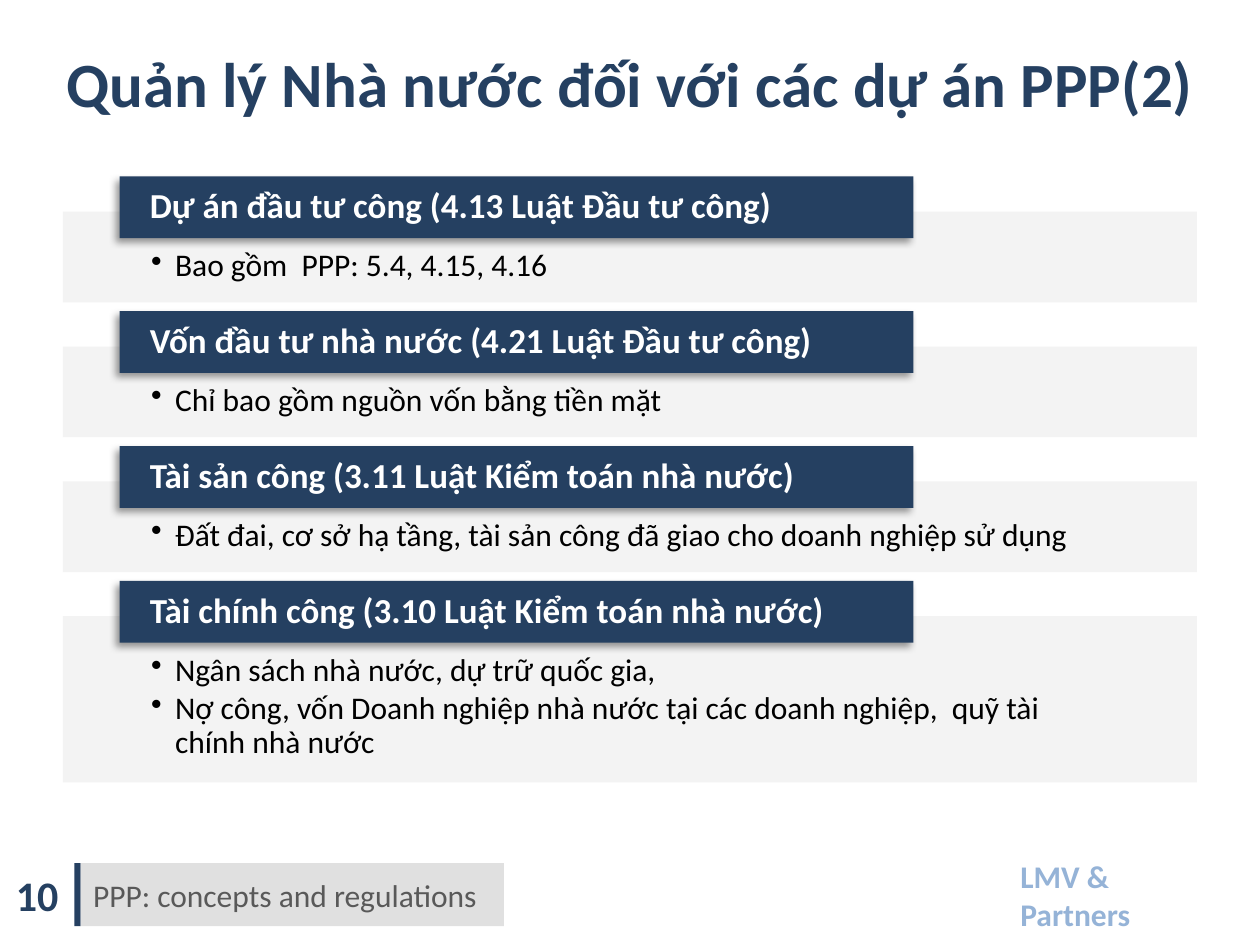
"""Build a slide on state management of PPP projects."""
from dataclasses import dataclass

from lxml import etree
from pptx import Presentation
from pptx import util as u
from pptx.dml.color import RGBColor
from pptx.enum import shapes, text
from pptx.oxml import ns

NAVY = RGBColor(0x25, 0x40, 0x61)
PALE = RGBColor(0xF2, 0xF2, 0xF2)
SILVER = RGBColor(0xD9, 0xD9, 0xD9)
GREY = RGBColor(0x59, 0x59, 0x59)
SKY = RGBColor(0x95, 0xB3, 0xD7)
BLACK = RGBColor(0, 0, 0)
WHITE = RGBColor(0xFF, 0xFF, 0xFF)

WIDTH, HEIGHT = u.Inches(10), u.Inches(7.5)
COLUMN, ROW = WIDTH / 100, HEIGHT / 75
FIRST_HEADING, PITCH, OVERHANG = 14, 10.7, 2.8
FOOTER_TOP, FOOTER_HEIGHT = 68.5, 5


@dataclass(frozen=True)
class Box:
    """Area in grid columns and rows."""
    column: float
    row: float
    columns: float
    rows: float

    def emu(self) -> tuple:
        """Return left, top, width and height."""
        return (u.Emu(round(self.column * COLUMN)), u.Emu(round(self.row * ROW)),
                u.Emu(round(self.columns * COLUMN)), u.Emu(round(self.rows * ROW)))


@dataclass(frozen=True)
class Topic:
    """Heading with its points and the height of its panel."""
    heading: str
    points: tuple[str, ...]
    rows: float = 7.2


TOPICS = (
    Topic("Dự án đầu tư công (4.13 Luật Đầu tư công)", ("Bao gồm  PPP: 5.4, 4.15, 4.16",)),
    Topic("Vốn đầu tư nhà nước (4.21 Luật Đầu tư công)",
          ("Chỉ bao gồm nguồn vốn bằng tiền mặt",)),
    Topic("Tài sản công (3.11 Luật Kiểm toán nhà nước)",
          ("Đất đai, cơ sở hạ tầng, tài sản công đã giao cho doanh nghiệp sử dụng",)),
    Topic("Tài chính công (3.10 Luật Kiểm toán nhà nước)",
          ("Ngân sách nhà nước, dự trữ quốc gia,",
           "Nợ công, vốn Doanh nghiệp nhà nước tại các doanh nghiệp,  quỹ tài chính nhà nước"),
          13.2),
)


def add_node(parent, tag: str, **attributes):
    """Append an XML element to a parent."""
    return etree.SubElement(parent, ns.qn(tag), attributes)


def add_panel(slide, box: Box, color: RGBColor, opacity: int = 100):
    """Draw a borderless rectangle."""
    panel = slide.shapes.add_shape(shapes.MSO_SHAPE.RECTANGLE, *box.emu())
    panel.shadow.inherit = False
    panel.fill.solid()
    panel.fill.fore_color.rgb = color
    panel.line.fill.background()
    if opacity < 100:
        tint = panel.fill._xPr.find(".//" + ns.qn("a:srgbClr"))
        add_node(tint, "a:alpha", val=str(opacity * 1000))
    return panel


def add_shadow(panel) -> None:
    """Give a panel a soft shadow to the lower left."""
    effects = panel._element.spPr.find(ns.qn("a:effectLst"))
    shadow = add_node(effects, "a:outerShdw", blurRad=str(u.Pt(4)), dist=str(u.Pt(3)),
                      dir=str(135 * 60000), algn="tr", rotWithShape="0")
    add_node(add_node(shadow, "a:srgbClr", val="000000"), "a:alpha", val="40000")


def write(holder, *lines: str, size: float, color: RGBColor, bold: bool = False,
          align=text.PP_ALIGN.LEFT, anchor=text.MSO_ANCHOR.MIDDLE, wrap: bool = True,
          insets: tuple = (0.1, 0.05, 0.1, 0.05), spacing: float = 1.0,
          bulleted: bool = False) -> None:
    """Fill a shape with formatted paragraphs."""
    frame = holder.text_frame
    frame.word_wrap = wrap
    frame.vertical_anchor = anchor
    (frame.margin_left, frame.margin_top,
     frame.margin_right, frame.margin_bottom) = map(u.Inches, insets)
    for index, line in enumerate(lines):
        paragraph = frame.paragraphs[0] if index == 0 else frame.add_paragraph()
        paragraph.alignment = align
        paragraph.line_spacing = spacing
        run = paragraph.add_run()
        run.text = line
        run.font.name = "Calibri"
        run.font.size = u.Pt(size)
        run.font.bold = bold
        run.font.color.rgb = color
        if bulleted:
            paragraph.level = 1
            paragraph.space_after = u.Pt(size * 0.15)
            properties = paragraph._p.get_or_add_pPr()
            properties.set("marL", str(u.Inches(0.19)))
            properties.set("indent", str(u.Inches(-0.19)))
            add_node(properties, "a:buChar", char="•")


def add_topic(slide, topic: Topic, index: int) -> None:
    """Draw a panel of points with its overlapping heading."""
    top = FIRST_HEADING + index * PITCH
    panel = add_panel(slide, Box(5, top + OVERHANG, 90, topic.rows), PALE, 90)
    write(panel, *topic.points, size=18, color=BLACK, anchor=text.MSO_ANCHOR.TOP,
          insets=(0.7, 0.3, 0.7, 0.14), spacing=0.9, bulleted=True)
    heading = add_panel(slide, Box(9.5, top, 63, 4.9), NAVY)
    add_shadow(heading)
    write(heading, topic.heading, size=20, color=WHITE, bold=True,
          insets=(0.24, 0, 0.24, 0), spacing=0.9)


def add_footer(slide) -> None:
    """Draw the slide number, the section name and the firm's name."""
    def area(column: float, columns: float) -> Box:
        return Box(column, FOOTER_TOP, columns, FOOTER_HEIGHT)

    add_panel(slide, area(5.9, 0.5), NAVY)
    section = add_panel(slide, area(6.4, 33.6), SILVER, 80)
    write(section, "PPP: concepts and regulations", size=18, color=GREY)
    number = slide.shapes.add_textbox(*area(0, 5.9).emu())
    write(number, "10", size=24, color=NAVY, bold=True, align=text.PP_ALIGN.CENTER)
    firm = slide.shapes.add_textbox(*area(80, 17.7).emu())
    write(firm, "LMV & Partners", size=18, color=SKY, bold=True)


def main() -> None:
    """Build and save the slide."""
    deck = Presentation()
    deck.slide_width, deck.slide_height = WIDTH, HEIGHT
    slide = deck.slides.add_slide(deck.slide_layouts[5])
    title = slide.shapes.title
    title.left, title.top, title.width, title.height = Box(3.8, 3, 92.4, 7.1).emu()
    write(title, "Quản lý Nhà nước đối với các dự án PPP(2)", size=36, color=NAVY, bold=True,
          align=text.PP_ALIGN.CENTER, anchor=text.MSO_ANCHOR.TOP, wrap=False)
    title.text_frame.auto_size = text.MSO_AUTO_SIZE.SHAPE_TO_FIT_TEXT
    for index, topic in enumerate(TOPICS):
        add_topic(slide, topic, index)
    add_footer(slide)
    deck.save("out.pptx")


if __name__ == "__main__":
    main()
